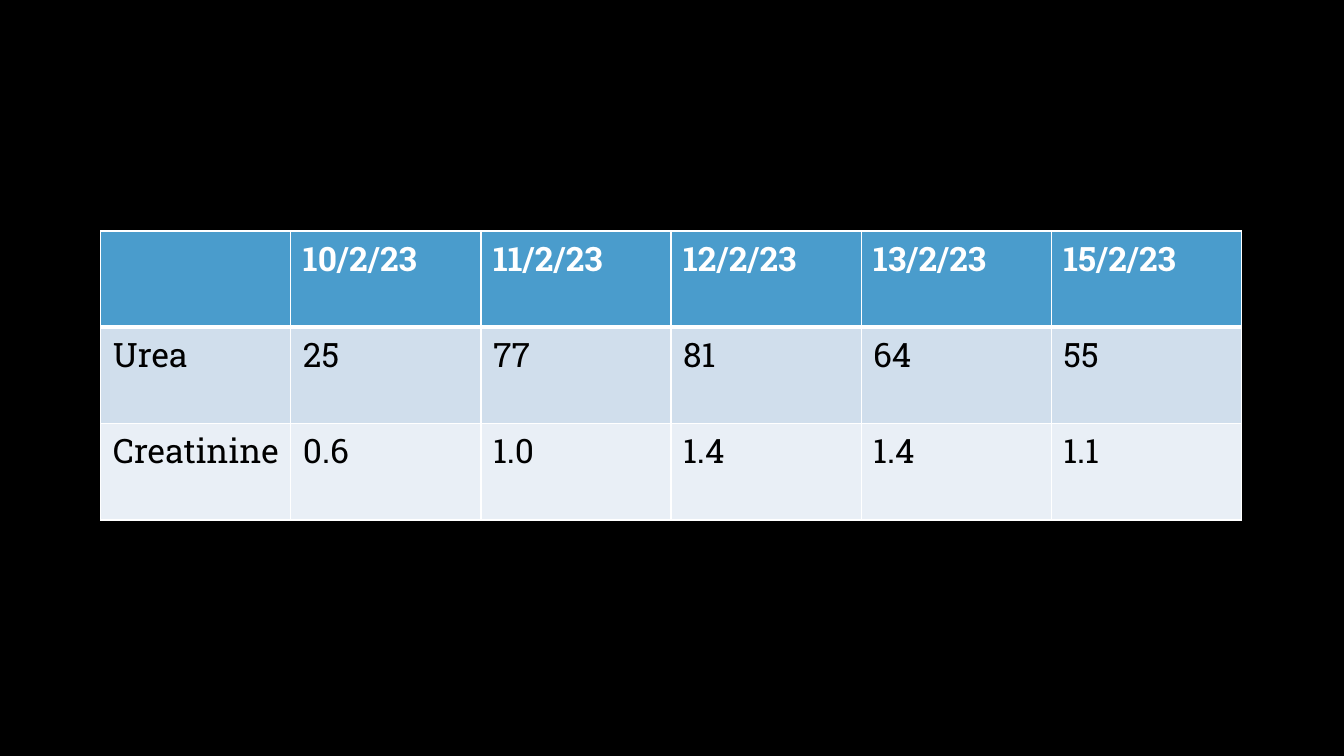
from lxml import etree
from pptx import Presentation
from pptx.dml.color import RGBColor
from pptx.oxml.ns import qn
from pptx.util import Pt

BLACK = RGBColor(0x00, 0x00, 0x00)
WHITE = RGBColor(0xFF, 0xFF, 0xFF)
HEADER_BLUE = RGBColor(0x4A, 0x9C, 0xCC)
BAND_BLUE = RGBColor(0xD0, 0xDE, 0xEC)
BAND_PALE = RGBColor(0xE9, 0xEF, 0xF6)
ROW_FILLS = (HEADER_BLUE, BAND_BLUE, BAND_PALE)

FONT_NAME = "Roboto Slab"
BLANK_LAYOUT = 6
TABLE_LEFT, TABLE_TOP = Pt(72), Pt(165)
COLUMN_WIDTH, ROW_HEIGHT = Pt(135.8), Pt(68.8)
SIDE_MARGIN, EDGE_MARGIN = Pt(8.64), Pt(3.6)
THIN_LINE, HEADER_LINE = Pt(1), Pt(3)

LAB_RESULTS = (
    ("", "10/2/23", "11/2/23", "12/2/23", "13/2/23", "15/2/23"),
    ("Urea", "25", "77", "81", "64", "55"),
    ("Creatinine", "0.6", "1.0", "1.4", "1.4", "1.1"),
)


def set_cell_borders(cell, top_width, bottom_width):
    """Draw white borders; must run before the cell is filled."""
    properties = cell._tc.get_or_add_tcPr()
    widths = {"lnL": THIN_LINE, "lnR": THIN_LINE, "lnT": top_width, "lnB": bottom_width}
    for side, width in widths.items():
        line = etree.SubElement(properties, qn(f"a:{side}"), w=str(width))
        fill = etree.SubElement(line, qn("a:solidFill"))
        etree.SubElement(fill, qn("a:srgbClr"), val=str(WHITE))


def write_cell(cell, text, is_header):
    cell.margin_left = cell.margin_right = SIDE_MARGIN
    cell.margin_top = cell.margin_bottom = EDGE_MARGIN
    if not text:
        return
    run = cell.text_frame.paragraphs[0].add_run()
    run.text = text
    run.font.name = FONT_NAME
    run.font.size = Pt(24)
    run.font.bold = is_header
    run.font.color.rgb = WHITE if is_header else BLACK


def add_results_table(page):
    row_count, column_count = len(LAB_RESULTS), len(LAB_RESULTS[0])
    table = page.shapes.add_table(
        row_count, column_count, TABLE_LEFT, TABLE_TOP,
        COLUMN_WIDTH * column_count, ROW_HEIGHT * row_count,
    ).table
    for column in table.columns:
        column.width = COLUMN_WIDTH
    for row_index, (row, values) in enumerate(zip(table.rows, LAB_RESULTS)):
        row.height = ROW_HEIGHT
        top_width = HEADER_LINE if row_index == 1 else THIN_LINE
        bottom_width = HEADER_LINE if row_index == 0 else THIN_LINE
        for cell, text in zip(row.cells, values):
            set_cell_borders(cell, top_width, bottom_width)
            cell.fill.solid()
            cell.fill.fore_color.rgb = ROW_FILLS[row_index]
            write_cell(cell, text, is_header=row_index == 0)


def main():
    deck = Presentation()
    deck.slide_width, deck.slide_height = Pt(960), Pt(540)
    page = deck.slides.add_slide(deck.slide_layouts[BLANK_LAYOUT])
    page.background.fill.solid()
    page.background.fill.fore_color.rgb = BLACK
    add_results_table(page)
    deck.save("out.pptx")


if __name__ == "__main__":
    main()
